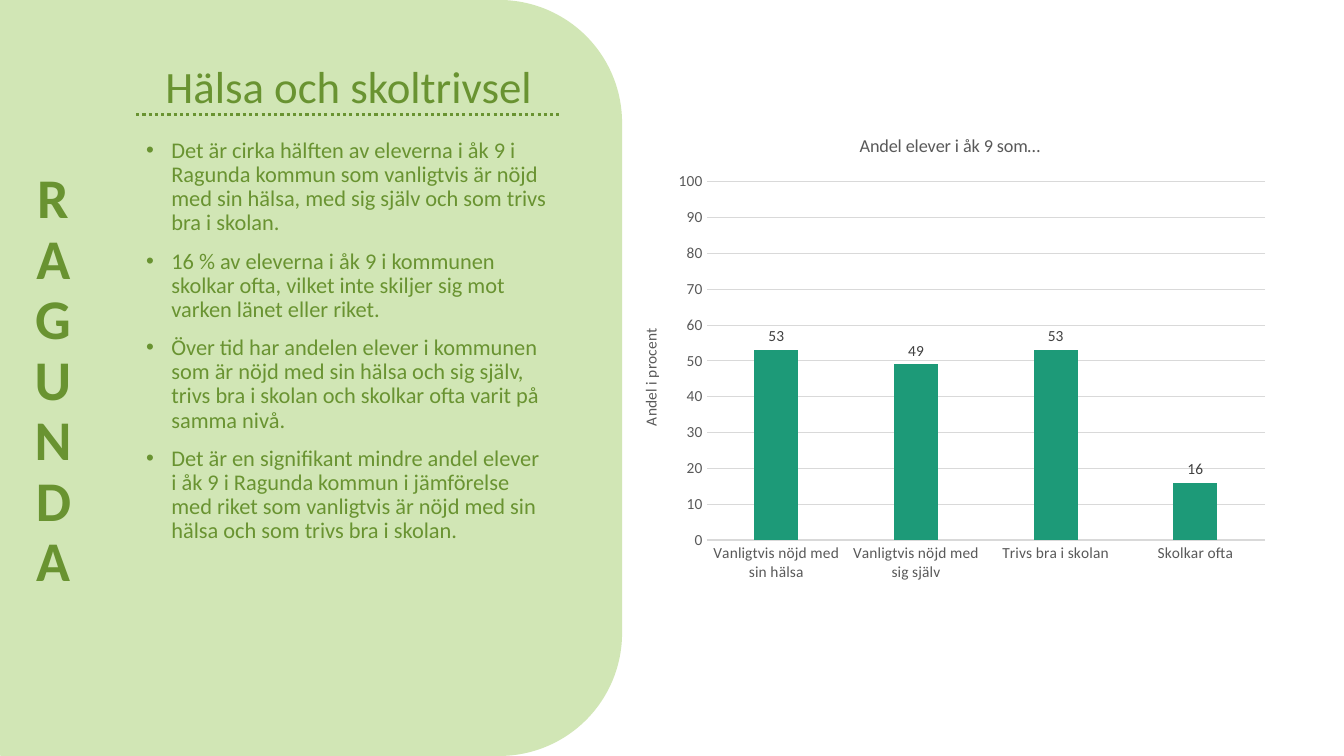
from dataclasses import dataclass
from typing import Any

from lxml.etree import SubElement
from pptx import Presentation
from pptx.chart.data import CategoryChartData as ChartData
from pptx.dml.color import RGBColor as Rgb
from pptx.enum.chart import XL_CHART_TYPE as Kind
from pptx.enum.chart import XL_LABEL_POSITION as Spot
from pptx.enum.chart import XL_TICK_MARK as Tick
from pptx.enum.dml import MSO_LINE as Dash
from pptx.enum.shapes import MSO_CONNECTOR as Link
from pptx.enum.shapes import MSO_SHAPE as Form
from pptx.enum.text import MSO_ANCHOR as Anchor
from pptx.enum.text import MSO_AUTO_SIZE as Fit
from pptx.enum.text import PP_ALIGN as Align
from pptx.oxml.ns import qn
from pptx.util import Inches, Pt


@dataclass(frozen=True)
class Theme:
    font: str = "Calibri"
    pale: str = "D1E6B5"
    leaf: str = "699331"
    teal: str = "1D9A78"
    grid: str = "D9D9D9"
    gray: str = "595959"
    dark: str = "404040"
    head: int = 32
    side: int = 40
    body: int = 16
    name: int = 13
    note: int = 11


@dataclass(frozen=True)
class Block:
    shape: Any
    box: tuple[float, float, float, float]
    lines: list[str]
    size: int
    anchor: Any
    align: Any
    bold: bool = False
    gap: int = 0


THEME = Theme()

POINTS = [
    "Det är cirka hälften av eleverna i åk 9 i Ragunda kommun som vanligtvis är "
    "nöjd med sin hälsa, med sig själv och som trivs bra i skolan.",
    "16 % av eleverna i åk 9 i kommunen skolkar ofta, vilket inte skiljer sig mot "
    "varken länet eller riket.",
    "Över tid har andelen elever i kommunen som är nöjd med sin hälsa och sig "
    "själv, trivs bra i skolan och skolkar ofta varit på samma nivå.",
    "Det är en signifikant mindre andel elever i åk 9 i Ragunda kommun i jämförelse "
    "med riket som vanligtvis är nöjd med sin hälsa och som trivs bra i skolan.",
]

SHARES = {
    "Vanligtvis nöjd med sin hälsa": 53,
    "Vanligtvis nöjd med sig själv": 49,
    "Trivs bra i skolan": 53,
    "Skolkar ofta": 16,
}


def apply(item: Any, form: dict[str, Any]) -> None:
    for key, value in form.items():
        setattr(item, key, value)


def style(font: Any, size: int, color: str, bold: bool = False) -> None:
    apply(font, {"name": THEME.font, "size": Pt(size), "bold": bold})
    font.color.rgb = Rgb.from_string(color)


def paint(fill: Any, color: str) -> None:
    fill.solid()
    fill.fore_color.rgb = Rgb.from_string(color)


def stroke(line: Any, color: str, width: float) -> None:
    paint(line.fill, color)
    line.width = Pt(width)


def write(block: Block) -> None:
    sides = ("left", "top", "width", "height")
    apply(block.shape, dict(zip(sides, map(Inches, block.box))))
    frame = block.shape.text_frame
    frame.text = "\n".join(block.lines)
    apply(frame, {"word_wrap": True, "auto_size": Fit.NONE,
                  "vertical_anchor": block.anchor})
    for para in frame.paragraphs:
        apply(para, {"alignment": block.align, "line_spacing": 0.9,
                     "space_before": Pt(block.gap)})
        for run in para.runs:
            style(run.font, block.size, THEME.leaf, block.bold)


def bullet(para: Any) -> None:
    props = para._p.get_or_add_pPr()
    props.set("marL", str(Inches(0.25)))
    props.set("indent", str(-Inches(0.25)))
    SubElement(props, qn("a:buFont")).set("typeface", "Arial")
    SubElement(props, qn("a:buChar")).set("char", "•")


def place(chart: Any, box: dict[str, float]) -> None:
    area = chart._chartSpace.chart.plotArea
    for old in area.findall(qn("c:layout")):
        area.remove(old)
    outer = SubElement(area, qn("c:layout"))
    area.insert(0, outer)
    inner = SubElement(outer, qn("c:manualLayout"))
    marks = {"layoutTarget": "inner", "xMode": "edge", "yMode": "edge"}
    for key, value in (marks | box).items():
        SubElement(inner, qn(f"c:{key}")).set("val", str(value))


def entitle(owner: Any, text: str, size: int) -> None:
    owner.has_title = True
    frame = getattr(owner, "chart_title" if hasattr(owner, "plots")
                    else "axis_title").text_frame
    frame.text = text
    style(frame.paragraphs[0].runs[0].font, size, THEME.gray)


def graph(shapes: Any) -> None:
    data = ChartData(number_format="0")
    data.categories = list(SHARES)
    data.add_series("Series 1", list(SHARES.values()))
    box = map(Inches, (6.16, 1.14, 6.52, 4.74))
    chart = shapes.add_chart(Kind.COLUMN_CLUSTERED, *box, data).chart
    chart.has_legend = False
    style(chart.font, THEME.note, THEME.gray)
    entitle(chart, "Andel elever i åk 9 som…", THEME.name)
    place(chart, {"x": 0.13, "y": 0.14, "w": 0.85, "h": 0.75})

    # Axes
    cats, vals = chart.category_axis, chart.value_axis
    for axis in (cats, vals):
        apply(axis, {"major_tick_mark": Tick.NONE, "minor_tick_mark": Tick.NONE})
        style(axis.tick_labels.font, THEME.note, THEME.gray)
    stroke(cats.format.line, THEME.grid, 0.75)
    apply(vals, {"minimum_scale": 0, "maximum_scale": 100, "major_unit": 10})
    apply(vals.tick_labels, {"number_format": "0", "number_format_is_linked": False})
    vals.format.line.fill.background()
    stroke(vals.major_gridlines.format.line, THEME.grid, 0.75)
    entitle(vals, "Andel i procent", THEME.note)

    # Columns
    plot = chart.plots[0]
    apply(plot, {"gap_width": 219, "overlap": -27, "vary_by_categories": False,
                 "has_data_labels": True})
    paint(plot.series[0].format.fill, THEME.teal)
    apply(plot.data_labels, {"show_value": True, "position": Spot.OUTSIDE_END,
                             "number_format": "0", "number_format_is_linked": False})
    style(plot.data_labels.font, THEME.note, THEME.dark)


def main() -> None:
    deck = Presentation()
    apply(deck, {"slide_width": Inches(13.33), "slide_height": Inches(7.5)})
    slide = deck.slides.add_slide(deck.slide_layouts[1])
    shapes = slide.shapes

    # Green panel, behind the text
    box = map(Inches, (-1.14, 0, 7.31, 7.5))
    panel = shapes.add_shape(Form.ROUNDED_RECTANGLE, *box)
    panel.shadow.inherit = False
    paint(panel.fill, THEME.pale)
    panel.line.fill.background()
    shapes._spTree.insert(2, panel._element)

    # Texts
    body = slide.placeholders[1]
    side = shapes.add_textbox(0, 0, 0, 0)
    blocks = [
        Block(shapes.title, (1.21, 0.44, 4.5, 0.89), ["Hälsa och skoltrivsel"],
              THEME.head, Anchor.MIDDLE, Align.CENTER),
        Block(side, (0, 0.14, 1.05, 7.3), ["RAGUNDA"],
              THEME.side, Anchor.BOTTOM, Align.CENTER, bold=True),
        Block(body, (1.35, 1.33, 4.17, 5.59), POINTS,
              THEME.body, Anchor.TOP, Align.LEFT, gap=10),
    ]
    for block in blocks:
        write(block)
    side.text_frame._txBody.bodyPr.set("vert", "wordArtVert")
    paint(body.fill, THEME.pale)
    for para in body.text_frame.paragraphs:
        bullet(para)

    # Chart
    graph(shapes)

    # Dotted rule under the title
    ends = map(Inches, (1.35, 1.14, 5.56, 1.14))
    rule = shapes.add_connector(Link.STRAIGHT, *ends)
    stroke(rule.line, THEME.leaf, 2.25)
    rule.line.dash_style = Dash.ROUND_DOT
    SubElement(rule._element.spPr, qn("a:effectLst"))

    deck.save("out.pptx")


if __name__ == "__main__":
    main()
